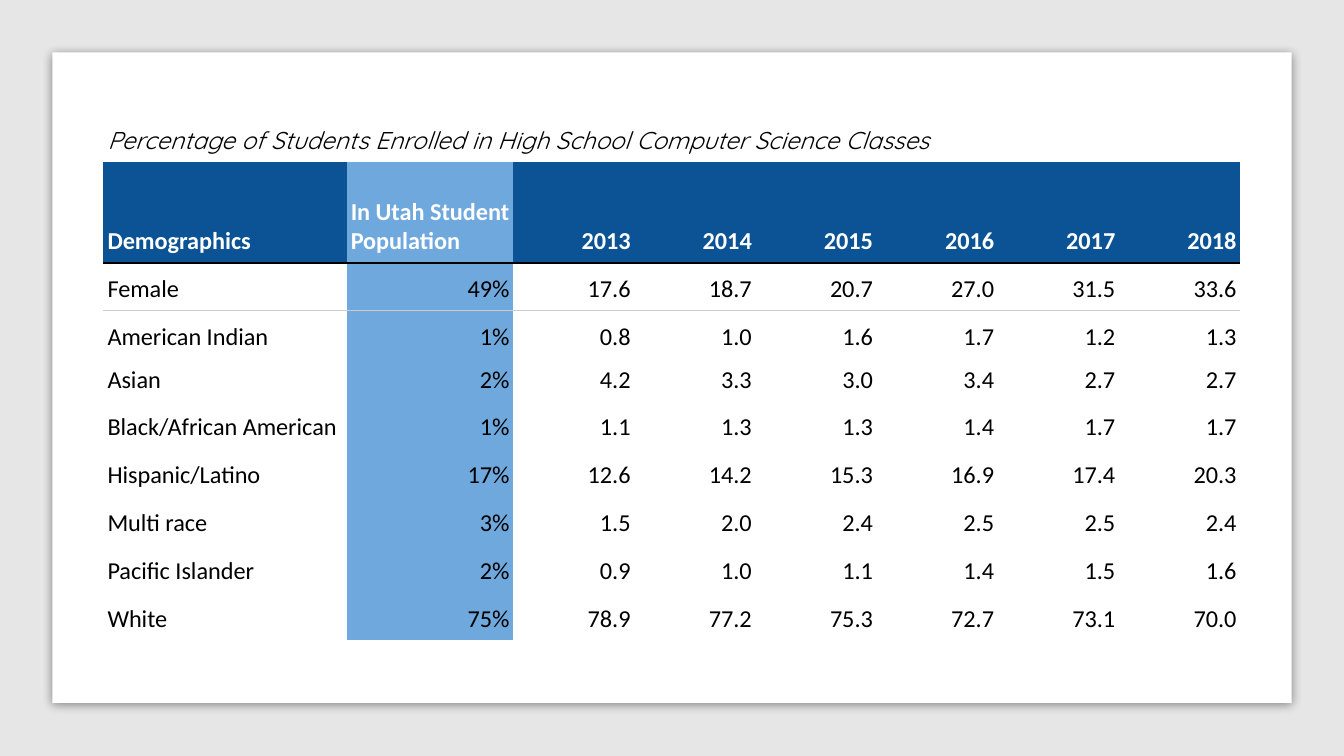
import lxml.etree
import pptx
import pptx.dml.color
import pptx.enum.shapes
import pptx.enum.text
import pptx.oxml.ns
import pptx.util

Inches = pptx.util.Inches
Pt = pptx.util.Pt
RGBColor = pptx.dml.color.RGBColor
Align = pptx.enum.text.PP_ALIGN
qn = pptx.oxml.ns.qn

BLACK = RGBColor(0x00, 0x00, 0x00)
WHITE = RGBColor(0xFF, 0xFF, 0xFF)
BACKDROP = RGBColor(0xE7, 0xE6, 0xE6)
NAVY = RGBColor(0x0B, 0x53, 0x94)
SKY = RGBColor(0x6F, 0xA8, 0xDC)
RULE_GRAY = RGBColor(0xCC, 0xCC, 0xCC)

SLIDE_WIDTH = 10
SLIDE_HEIGHT = SLIDE_WIDTH * 9 / 16
PLAIN_TABLE_STYLE = "{2D5ABB26-0587-4C30-8999-92F81FD0307C}"
CAPTION = "Percentage of Students Enrolled in High School Computer Science Classes"
HEADINGS = ["Demographics", "In Utah Student Population"] + [
    str(year) for year in range(2013, 2019)
]
DEMOGRAPHICS = [
    ["Female", "49%", "17.6", "18.7", "20.7", "27.0", "31.5", "33.6"],
    ["American Indian", "1%", "0.8", "1.0", "1.6", "1.7", "1.2", "1.3"],
    ["Asian", "2%", "4.2", "3.3", "3.0", "3.4", "2.7", "2.7"],
    ["Black/African American", "1%", "1.1", "1.3", "1.3", "1.4", "1.7", "1.7"],
    ["Hispanic/Latino", "17%", "12.6", "14.2", "15.3", "16.9", "17.4", "20.3"],
    ["Multi race", "3%", "1.5", "2.0", "2.4", "2.5", "2.5", "2.4"],
    ["Pacific Islander", "2%", "0.9", "1.0", "1.1", "1.4", "1.5", "1.6"],
    ["White", "75%", "78.9", "77.2", "75.3", "72.7", "73.1", "70.0"],
]
TABLE_WIDTH = 8.46
LABEL_WIDTHS = [1.81, 1.24]
YEAR_WIDTH = (TABLE_WIDTH - sum(LABEL_WIDTHS)) / 6
COLUMN_WIDTHS = LABEL_WIDTHS + [YEAR_WIDTH] * 6
ROW_HEIGHT = 3.2 / 9
ROW_HEIGHTS = [ROW_HEIGHT, 0.75] + [ROW_HEIGHT] * 2 + [0.3] + [ROW_HEIGHT] * 5
RULES_BELOW = {1: BLACK, 2: RULE_GRAY}


class SlideBuilder:
    body_font = "Calibri"
    caption_font = "Quicksand"
    font_size = Pt(13)

    def __init__(self, slide):
        self.slide = slide

    def panel(self, left, top, width, height, color):
        shape = self.slide.shapes.add_shape(
            pptx.enum.shapes.MSO_SHAPE.RECTANGLE,
            Inches(left), Inches(top), Inches(width), Inches(height),
        )
        shape.fill.solid()
        shape.fill.fore_color.rgb = color
        shape.line.fill.background()
        shape.shadow.inherit = False
        return shape

    def shadow(self, shape, blur, distance, opacity):
        effects = shape._element.spPr.find(qn("a:effectLst"))
        outer = lxml.etree.SubElement(
            effects, qn("a:outerShdw"),
            blurRad=str(Pt(blur)), dist=str(Pt(distance)), dir="5400000",
            algn="t", rotWithShape="0",
        )
        color = lxml.etree.SubElement(outer, qn("a:srgbClr"), val=str(BLACK))
        lxml.etree.SubElement(color, qn("a:alpha"), val=str(opacity * 1000))

    def table(self, left, top, widths, heights):
        table = self.slide.shapes.add_table(
            len(heights), len(widths), Inches(left), Inches(top),
            Inches(sum(widths)), Inches(sum(heights)),
        ).table
        table.first_row = False
        table.horz_banding = False
        table._tbl.tblPr.find(qn("a:tableStyleId")).text = PLAIN_TABLE_STYLE
        for column, width in zip(table.columns, widths):
            column.width = Inches(width)
        for row, height in zip(table.rows, heights):
            row.height = Inches(height)
        return table

    def cell(self, cell, text, align, color=BLACK, fill=None, bold=False,
             italic=False, font=body_font):
        cell.vertical_anchor = pptx.enum.text.MSO_ANCHOR.BOTTOM
        cell.margin_left = cell.margin_right = Inches(0.03)
        cell.margin_top = cell.margin_bottom = Inches(0.05)
        if fill is None:
            cell.fill.background()
        else:
            cell.fill.solid()
            cell.fill.fore_color.rgb = fill
        cell.text_frame.text = text
        paragraph = cell.text_frame.paragraphs[0]
        paragraph.alignment = align
        style = paragraph.runs[0].font
        style.name = font
        style.size = self.font_size
        style.bold = bold
        style.italic = italic
        style.color.rgb = color

    def borders(self, cell, top=None, bottom=None):
        properties = cell._tc.get_or_add_tcPr()
        sides = [("lnL", None), ("lnR", None), ("lnT", top), ("lnB", bottom)]
        for position, (side, color) in enumerate(sides):
            line = lxml.etree.Element(qn("a:" + side), w=str(Pt(1)))
            if color is None:
                lxml.etree.SubElement(line, qn("a:noFill"))
            else:
                fill = lxml.etree.SubElement(line, qn("a:solidFill"))
                lxml.etree.SubElement(fill, qn("a:srgbClr"), val=str(color))
            properties.insert(position, line)


def main():
    presentation = pptx.Presentation()
    presentation.slide_width = Inches(SLIDE_WIDTH)
    presentation.slide_height = Inches(SLIDE_HEIGHT)
    builder = SlideBuilder(
        presentation.slides.add_slide(presentation.slide_layouts[6])
    )

    builder.panel(0, 0, SLIDE_WIDTH, SLIDE_HEIGHT, BACKDROP)
    card = builder.panel(0.39, 0.39, 9.22, 4.84, WHITE)
    builder.shadow(card, blur=5, distance=1.4, opacity=43)

    table = builder.table(0.77, 0.85, COLUMN_WIDTHS, ROW_HEIGHTS)
    table.cell(0, 0).merge(table.cell(0, len(COLUMN_WIDTHS) - 1))
    builder.cell(table.cell(0, 0), CAPTION, Align.JUSTIFY, italic=True,
                 font=builder.caption_font)

    for column, heading in enumerate(HEADINGS):
        builder.cell(table.cell(1, column), heading,
                     Align.LEFT if column < 2 else Align.RIGHT,
                     color=WHITE, fill=SKY if column == 1 else NAVY, bold=True)
    for row, values in enumerate(DEMOGRAPHICS, start=2):
        for column, value in enumerate(values):
            builder.cell(table.cell(row, column), value,
                         Align.LEFT if column == 0 else Align.RIGHT,
                         fill=SKY if column == 1 else None)

    for row in range(len(ROW_HEIGHTS)):
        for column in range(len(COLUMN_WIDTHS)):
            builder.borders(table.cell(row, column),
                            top=RULES_BELOW.get(row - 1),
                            bottom=RULES_BELOW.get(row))
    presentation.save("out.pptx")


if __name__ == "__main__":
    main()
